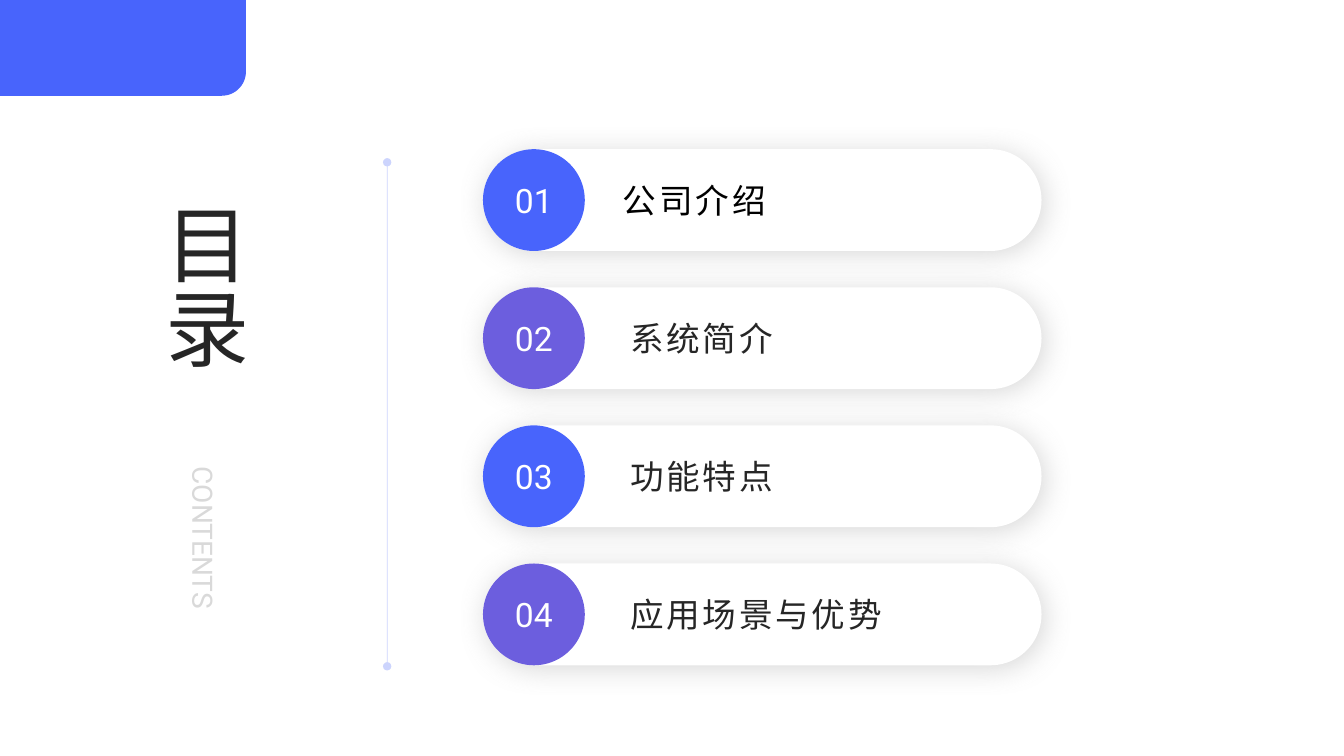
import math

from lxml import etree
from pptx import Presentation
from pptx.dml.color import RGBColor
from pptx.enum import shapes, text
from pptx.oxml import ns
from pptx.util import Inches, Pt

BLUE = RGBColor(0x48, 0x64, 0xFC)
PURPLE = RGBColor(0x6C, 0x5E, 0xDE)
LINE_BLUE = RGBColor(0x00, 0x2A, 0xF9)
WHITE = RGBColor(0xFF, 0xFF, 0xFF)
BLACK = RGBColor(0x00, 0x00, 0x00)
DARK = RGBColor(0x26, 0x26, 0x26)
PALE = RGBColor(0xD9, 0xD9, 0xD9)

FONT = "Roboto"
HEADING = "目录"
SUBHEADING = "CONTENTS"
# number, topic, badge colour, topic colour, topic left
TOPICS = [
    ("01", "公司介绍", BLUE, BLACK, 6.08),
    ("02", "系统简介", PURPLE, DARK, 6.15),
    ("03", "功能特点", BLUE, DARK, 6.15),
    ("04", "应用场景与优势", PURPLE, DARK, 6.15),
]
ROW_LEFT, ROW_TOP, ROW_PITCH = 4.79, 1.48, 1.37
PILL_WIDTH, BADGE = 5.54, 1.01
TOPIC_WIDTH = 4.19
CORNER_LEFT, CORNER_RIGHT, CORNER_BOTTOM, CORNER_RADIUS = -0.02, 2.44, 0.95, 0.24


def box(left, top, width, height):
    return tuple(Inches(v) for v in (left, top, width, height))


def add_child(parent, tag, **attributes):
    return etree.SubElement(parent, ns.qn(tag), attributes)


def write(shape, words, size, color, align, insets=None, vertical=False, spacing=None):
    frame = shape.text_frame
    settings = {"word_wrap": True, "vertical_anchor": text.MSO_ANCHOR.MIDDLE}
    if insets:
        sides = ("margin_left", "margin_top", "margin_right", "margin_bottom")
        settings.update(zip(sides, map(Inches, insets)))
    for name, value in settings.items():
        setattr(frame, name, value)
    if vertical:
        frame._txBody.bodyPr.set("vert", "eaVert")
    paragraph = frame.paragraphs[0]
    paragraph.alignment = align
    run = paragraph.add_run()
    run.text = words
    for name, value in {"name": FONT, "size": Pt(size)}.items():
        setattr(run.font, name, value)
    run.font.color.rgb = color
    if spacing:
        run._r.get_or_add_rPr().set("spc", str(spacing * 100))
    return paragraph


def paint(shape, color):
    shape.fill.solid()
    shape.fill.fore_color.rgb = color
    shape.line.fill.background()
    shape.shadow.inherit = False


def add_soft_shadow(shape):
    effects = shape._element.spPr.find(ns.qn("a:effectLst"))
    shadow = add_child(effects, "a:outerShdw", blurRad=str(Pt(20)), dist=str(Pt(3)),
                       dir="2700000", algn="tl", rotWithShape="0")
    add_child(add_child(shadow, "a:srgbClr", val="808080"), "a:alpha", val="30000")


def add_corner_block(slide):
    """Block in the top left whose bottom right corner is rounded."""
    center_x = CORNER_RIGHT - CORNER_RADIUS
    center_y = CORNER_BOTTOM - CORNER_RADIUS
    angles = [math.radians(a) for a in range(0, 91, 5)]
    outline = [(CORNER_RIGHT, 0)]
    outline += [(center_x + CORNER_RADIUS * math.cos(a),
                 center_y + CORNER_RADIUS * math.sin(a)) for a in angles]
    outline.append((CORNER_LEFT, CORNER_BOTTOM))
    builder = slide.shapes.build_freeform(Inches(CORNER_LEFT), 0)
    builder.add_line_segments([(Inches(x), Inches(y)) for x, y in outline], close=True)
    paint(builder.convert_to_shape(), BLUE)


def add_divider(slide):
    divider = slide.shapes.add_connector(
        shapes.MSO_CONNECTOR.STRAIGHT, *box(3.84, 1.61, 3.84, 6.61))
    divider.line.width = Pt(0.5)
    divider.line.color.rgb = LINE_BLUE
    properties = divider._element.spPr
    add_child(properties.find(".//" + ns.qn("a:srgbClr")), "a:alpha", val="20000")
    for end in ("a:headEnd", "a:tailEnd"):
        add_child(properties.find(ns.qn("a:ln")), end, type="oval")
    add_child(properties, "a:effectLst")


def add_topic(slide, top, number, topic, badge_color, topic_color, topic_left):
    pill = slide.shapes.add_shape(shapes.MSO_SHAPE.ROUNDED_RECTANGLE,
                                  *box(ROW_LEFT, top, PILL_WIDTH, BADGE))
    pill.adjustments[0] = 0.5
    paint(pill, WHITE)
    add_soft_shadow(pill)

    badge = slide.shapes.add_shape(shapes.MSO_SHAPE.OVAL,
                                   *box(ROW_LEFT, top, BADGE, BADGE))
    paint(badge, badge_color)
    write(badge, number, 24, WHITE, text.PP_ALIGN.CENTER, insets=(0, 0, 0, 0))

    label = slide.shapes.add_textbox(*box(topic_left, top, TOPIC_WIDTH, BADGE))
    write(label, topic, 24, topic_color, text.PP_ALIGN.LEFT,
          insets=(0.1, 0, 0.1, 0), spacing=2)


def main():
    deck = Presentation()
    deck.slide_width, deck.slide_height = Inches(13.33), Inches(7.5)
    slide = deck.slides.add_slide(deck.slide_layouts[5])

    add_divider(slide)
    add_corner_block(slide)

    subheading = slide.shapes.add_textbox(*box(1.27, 4.53, 1.5, 2.13))
    line = write(subheading, SUBHEADING, 20, PALE, text.PP_ALIGN.JUSTIFY, vertical=True)
    line.space_after = Pt(10)

    heading = slide.shapes.title
    heading.left, heading.top, heading.width, heading.height = box(1.28, 1.96, 1.5, 2.32)
    write(heading, HEADING, 60, DARK, text.PP_ALIGN.RIGHT, vertical=True)

    for index, topic in enumerate(TOPICS):
        add_topic(slide, ROW_TOP + index * ROW_PITCH, *topic)

    deck.save("out.pptx")


if __name__ == "__main__":
    main()
